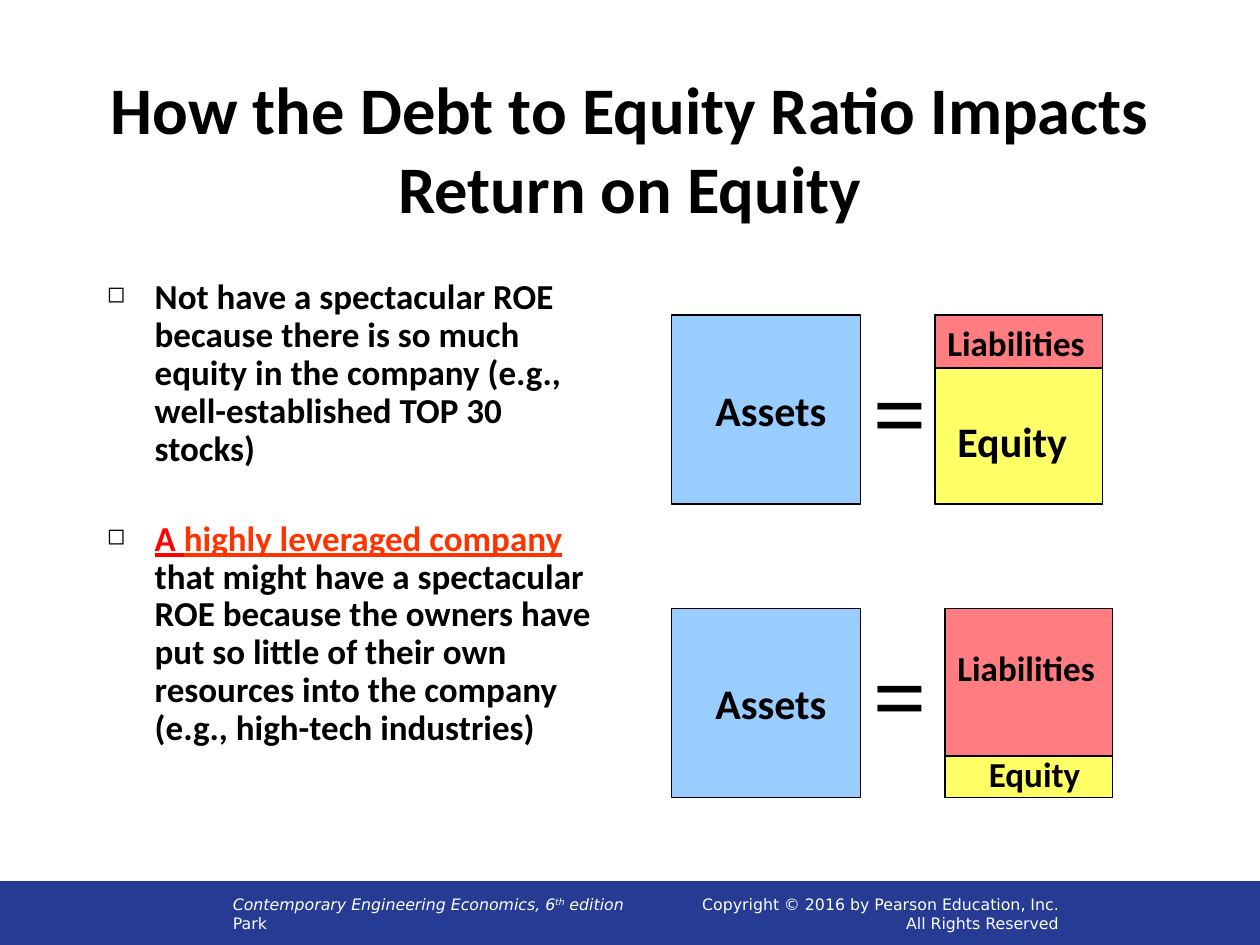
from lxml.etree import SubElement
from pptx import Presentation
from pptx.dml.color import RGBColor
from pptx.enum.shapes import MSO_SHAPE as Shape
from pptx.enum.text import MSO_ANCHOR as Anchor, MSO_AUTO_SIZE as AutoSize, PP_ALIGN as Align
from pptx.oxml.ns import qn
from pptx.util import Inches, Pt

# Content
COLORS = {"black": "000000", "white": "FFFFFF", "navy": "263B94", "blue": "99CCFF",
          "coral": "FF7C80", "yellow": "FFFF66", "red": "FF0000", "orange": "FF3300"}
TITLE = "How the Debt to Equity Ratio Impacts Return on Equity"
# Each bullet is a list of (text, color, underlined)
BULLETS = [
    [("Not have a spectacular ROE because there is so much equity in the company "
      "(e.g., well-established TOP 30 stocks)", "black", False)],
    [("A ", "red", True), ("highly leveraged company", "orange", True),
     (" that might have a spectacular ROE because the owners have put so little of their own "
      "resources into the company (e.g., high-tech industries)", "black", False)],
]
# Label positions are (left, top, size)
BALANCES = [
    {"top": 2.5, "stack_left": 7.42, "liabilities_height": 0.42,
     "labels": {"Assets": (5.58, 3, 24), "Liabilities": (7.42, 2.5, 20),
                "Equity": (7.5, 3.25, 24)}, "equals_top": 2.75},
    {"top": 4.83, "stack_left": 7.5, "liabilities_height": 1.17,
     "labels": {"Assets": (5.58, 5.33, 24), "Liabilities": (7.5, 5.08, 20),
                "Equity": (7.75, 5.92, 20)}, "equals_top": 5},
]
LABEL_SIZES = {("Assets", 24): (1.1, 0.5), ("Liabilities", 20): (1.3, 0.44),
               ("Equity", 24): (1.08, 0.5), ("Equity", 20): (0.93, 0.44)}
ASSETS_LEFT, ASSETS_WIDTH, STACK_WIDTH, BLOCK_HEIGHT = 5.33, 1.5, 1.33, 1.5

presentation = Presentation()
presentation.slide_width, presentation.slide_height = Inches(10), Inches(7.5)
slide = presentation.slides.add_slide(presentation.slide_layouts[6])


def rgb(name):
    return RGBColor.from_string(COLORS[name])


def style(run, size, font="Calibri", color="black", bold=True):
    run.font.size, run.font.name, run.font.bold = Pt(size), font, bold
    run.font.color.rgb = rgb(color)


def add_box(left, top, width, height, fill=None, line="black"):
    shape = slide.shapes.add_shape(
        Shape.RECTANGLE, Inches(left), Inches(top), Inches(width), Inches(height))
    shape.shadow.inherit = False
    if fill:
        shape.fill.solid()
        shape.fill.fore_color.rgb = rgb(fill)
    else:
        shape.fill.background()
    shape.line.color.rgb = rgb(line)
    shape.line.width = Pt(0.75)


def add_text_frame(left, top, width, height, anchor=Anchor.TOP, wrap=True):
    box = slide.shapes.add_textbox(Inches(left), Inches(top), Inches(width), Inches(height))
    text_frame = box.text_frame
    text_frame.word_wrap = wrap
    text_frame.vertical_anchor = anchor
    return text_frame


def add_label(text, left, top, width, height, size, font="Calibri"):
    text_frame = add_text_frame(left, top, width, height, wrap=False)
    text_frame.auto_size = AutoSize.SHAPE_TO_FIT_TEXT
    text_frame.text = text
    style(text_frame.paragraphs[0].runs[0], size, font)


def add_bullet(paragraph):
    properties = paragraph._p.get_or_add_pPr()
    properties.set("marL", str(Inches(0.38)))
    properties.set("indent", str(-Inches(0.38)))
    color = SubElement(properties, qn("a:buClr"))
    SubElement(color, qn("a:srgbClr"), val=COLORS["black"])
    SubElement(properties, qn("a:buSzPct"), val="65000")
    SubElement(properties, qn("a:buChar"), char="◻")


# Footer band: book on the left, copyright on the right
add_box(0, 7, 10, 0.5, "navy", "navy")
book = add_text_frame(1.75, 7, 6.16, 0.5, Anchor.MIDDLE)
for text in ("Contemporary Engineering Economics, 6", "th", " edition"):
    run = book.paragraphs[0].add_run()
    run.text = text
    run.font.italic = True
    if text == "th":
        run.font._element.set("baseline", "30000")
book.add_paragraph().text = "Park"
rights = add_text_frame(4.92, 7, 3.58, 0.5, Anchor.MIDDLE)
rights.text = "Copyright © 2016 by Pearson Education, Inc.\nAll Rights Reserved"
for paragraph in rights.paragraphs:
    paragraph.alignment = Align.RIGHT
for paragraph in book.paragraphs + rights.paragraphs:
    for run in paragraph.runs:
        style(run, 9, "DejaVu Sans", "white", bold=False)

# Title
title = add_text_frame(0.75, 0.67, 8.5, 1, Anchor.MIDDLE)
title.text = TITLE
title.paragraphs[0].alignment = Align.CENTER
style(title.paragraphs[0].runs[0], 38)

# Bullets
body = add_text_frame(0.75, 2.17, 4.17, 4.5)
for index, pieces in enumerate(BULLETS):
    paragraph = body.add_paragraph() if index else body.paragraphs[0]
    paragraph.line_spacing = 0.9
    if index:
        paragraph.space_before = Pt(30)
    add_bullet(paragraph)
    for text, color, underlined in pieces:
        run = paragraph.add_run()
        run.text = text
        style(run, 20, color=color)
        run.font.underline = underlined

# Balance diagrams: assets = liabilities + equity
for balance in BALANCES:
    top, left, split = balance["top"], balance["stack_left"], balance["liabilities_height"]
    add_box(ASSETS_LEFT, top, ASSETS_WIDTH, BLOCK_HEIGHT, "blue")
    add_box(left, top, STACK_WIDTH, BLOCK_HEIGHT)
    add_box(left, top, STACK_WIDTH, split, "coral")
    add_box(left, top + split, STACK_WIDTH, BLOCK_HEIGHT - split, "yellow")
    for text, (label_left, label_top, size) in balance["labels"].items():
        add_label(text, label_left, label_top, *LABEL_SIZES[text, size], size)
    add_label("=", ASSETS_LEFT + ASSETS_WIDTH, balance["equals_top"], 0.63, 1, 54,
              "Times New Roman")

presentation.save("out.pptx")
